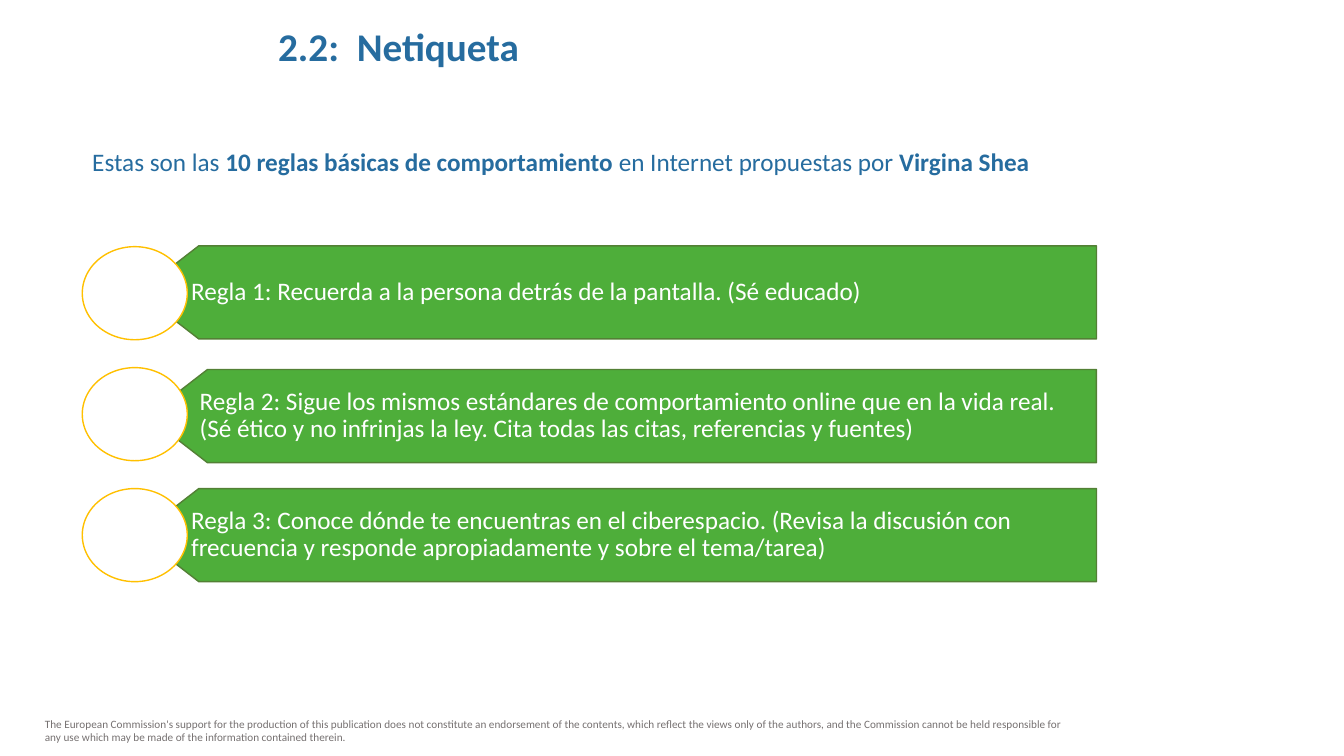
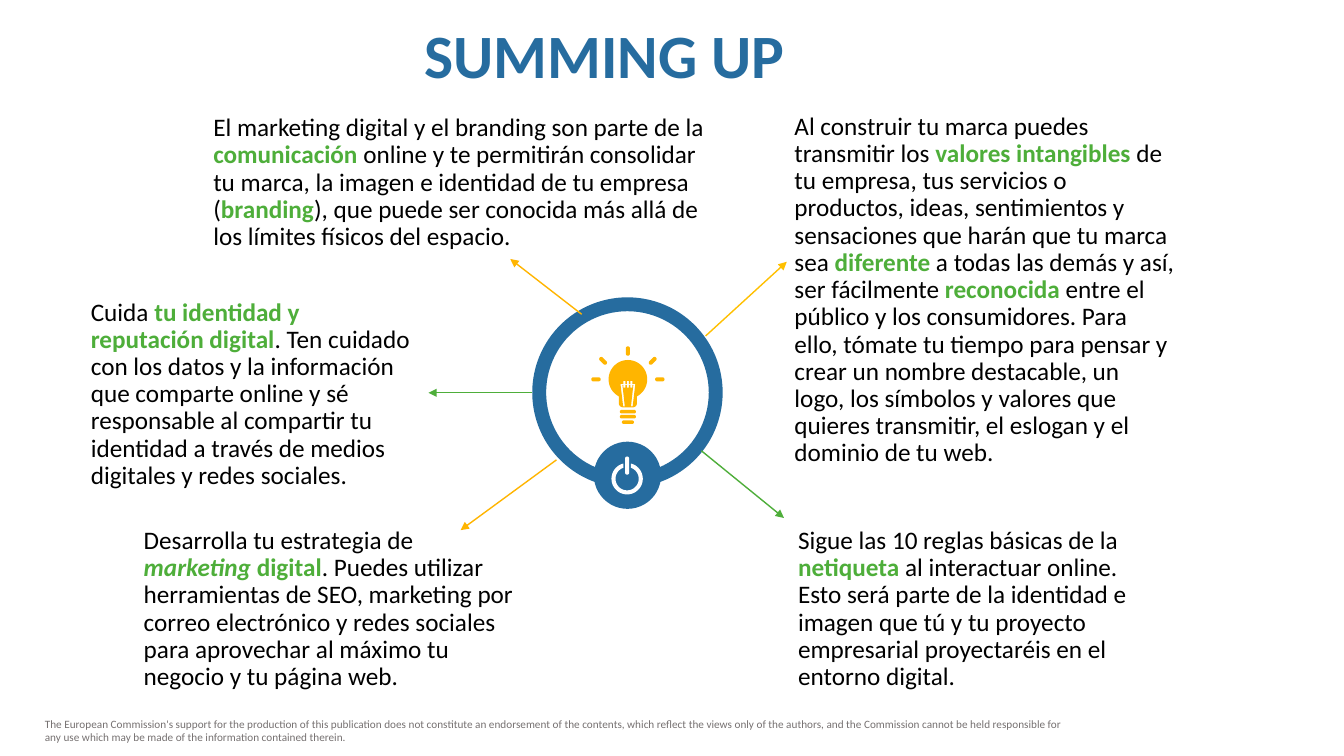
from math import cos, radians, sin

from lxml.etree import SubElement
from pptx import Presentation
from pptx.dml.color import RGBColor
from pptx.enum.shapes import MSO_CONNECTOR, MSO_SHAPE
from pptx.enum.text import MSO_ANCHOR, MSO_AUTO_SIZE, PP_ALIGN
from pptx.oxml.ns import qn
from pptx.util import Pt

FONT = "Calibri"
BLUE, GREEN, AMBER, GOLD = "266C9F", "4EAE3A", "FFB500", "FFC000"
DARK_GREEN, GREY, BLACK, WHITE = "538035", "767171", "000000", "FFFFFF"

FOOTER = (
    "The European Commission's support for the production of this publication does not "
    "constitute an endorsement of the contents, which reflect the views only of the authors, "
    "and the Commission cannot be held responsible for any use which may be made of the "
    "information contained therein."
)

RULES_INTRO = [
    ("Estas son las ", ""),
    ("10 reglas básicas de comportamiento ", "bold"),
    ("en Internet propuestas por ", ""),
    ("Virgina Shea", "bold"),
]
RULES = [
    (99, 175.6, "Regla 1: Recuerda a la persona detrás de la pantalla. (Sé educado)"),
    (105.2, 264, "Regla 2: Sigue los mismos estándares de comportamiento online que en la vida "
                 "real. (Sé ético y no infrinjas la ley. Cita todas las citas, referencias y fuentes)"),
    (99, 349, "Regla 3: Conoce dónde te encuentras en el ciberespacio. (Revisa la discusión con "
              "frecuencia y responde apropiadamente y sobre el tema/tarea)"),
]
RULE_RIGHT, RULE_HEIGHT, RULE_POINT = 783.2, 66.5, 43
CIRCLE_LEFT, CIRCLE_TOP, CIRCLE_PITCH, CIRCLE_WIDTH = 58.8, 176.2, 86.4, 75

SUMMARIES = [
    ((95.6, 372.8, 285, 125), [
        ("Desarrolla tu estrategia de ", ""),
        ("marketing", "bold italic"),
        (" digital", "bold"),
        (". Puedes utilizar herramientas de SEO, marketing por correo electrónico y redes "
         "sociales para aprovechar al máximo tu negocio y tu página web.", ""),
    ]),
    ((560.4, 76, 286, 263), [
        ("Al construir tu marca puedes transmitir los ", ""),
        ("valores intangibles ", "bold"),
        ("de tu empresa, tus servicios o productos, ideas, sentimientos y sensaciones que harán "
         "que tu marca sea ", ""),
        ("diferente", "bold"),
        (" a todas las demás y así, ser fácilmente ", ""),
        ("reconocida", "bold"),
        (" entre el público y los consumidores. Para ello, tómate tu tiempo para pensar y crear "
         "un nombre destacable, un logo, los símbolos y valores que quieres transmitir, el "
         "eslogan y el dominio de tu web.", ""),
    ]),
    ((563, 372.8, 263, 125), [
        ("Sigue las 10 reglas básicas de la ", ""),
        ("netiqueta ", "bold"),
        ("al interactuar online. Esto será parte de la identidad e imagen que tú y tu proyecto "
         "empresarial proyectaréis en el entorno digital.", ""),
    ]),
    ((145.3, 78.2, 376, 105), [
        ("El marketing digital y el branding son parte de la ", ""),
        ("comunicación ", "bold"),
        ("online y te permitirán consolidar tu marca, la imagen e identidad de tu empresa (", ""),
        ("branding", "bold"),
        ("), que puede ser conocida más allá de los límites físicos del espacio.", ""),
    ]),
    ((57.8, 209.3, 243, 145), [
        ("Cuida ", ""),
        ("tu identidad y reputación digital", "bold"),
        (". Ten cuidado con los datos y la información que comparte online y sé responsable al "
         "compartir tu identidad a través de medios digitales y redes sociales.", ""),
    ]),
]
ARROWS = [
    ((380, 280.6), (306, 280.6), GREEN),
    ((501, 322), (560, 370), GREEN),
    ((415.5, 224.5), (364.5, 185), AMBER),
    ((504, 240), (562, 187), GOLD),
    ((397.5, 328.5), (329, 378.7), AMBER),
]

CENTRE_X, RING_Y, HUB_Y, BULB_Y, POWER_Y = 448.2, 280.4, 339.5, 271, 342
RAYS = [(-22.8, 0, 0), (-17.7, -13.2, 45), (0, -20.2, 90), (17.7, -13.2, -45), (22.8, 0, 0)]
BASE_BARS = [(23.1, 11.5), (26.7, 11.5), (30.6, 8.6)]
FILAMENT_HALF = [
    (0.7, 1.2), (0.7, 3.3), (1.8, 3.3), (1.8, 1.2), (3.2, 1.2), (3.2, 3.3), (5.3, 3.3),
    (3.4, 19.3), (2.2, 19.3), (3.9, 4), (3.2, 4), (3.2, 6), (1.8, 6), (1.8, 4), (0.7, 4), (0.7, 6),
]


def colour(value):
    return RGBColor.from_string(value)


def style_shape(shape, fill, line=None):
    shape.shadow.inherit = False
    shape.fill.solid()
    shape.fill.fore_color.rgb = colour(fill)
    if line:
        shape.line.color.rgb = colour(line)
        shape.line.width = Pt(1)
    else:
        shape.line.fill.background()


def write(shape, pieces, size, plain, strong, spacing, anchor=MSO_ANCHOR.MIDDLE):
    frame = shape.text_frame
    frame.word_wrap = True
    frame.auto_size = MSO_AUTO_SIZE.NONE
    frame.vertical_anchor = anchor
    paragraph = frame.paragraphs[0]
    paragraph.alignment = PP_ALIGN.LEFT
    paragraph.line_spacing = spacing
    for text, style in pieces:
        run = paragraph.add_run()
        run.text = text
        run.font.name = FONT
        run.font.size = Pt(size)
        run.font.bold = "bold" in style
        run.font.italic = "italic" in style
        run.font.color.rgb = colour(strong if style else plain)


def add_text(slide, box, pieces, size, plain, strong, spacing, anchor=MSO_ANCHOR.MIDDLE):
    shape = slide.shapes.add_textbox(*map(Pt, box))
    write(shape, pieces, size, plain, strong, spacing, anchor)


def add_centred(slide, kind, x, y, width, height, fill, line=None):
    shape = slide.shapes.add_shape(
        kind, Pt(x - width / 2), Pt(y - height / 2), Pt(width), Pt(height))
    style_shape(shape, fill, line)
    return shape


def add_outlines(slide, x, y, outlines, fill, line=None):
    builder = None
    for outline in outlines:
        points = [(Pt(x + dx), Pt(y + dy)) for dx, dy in outline]
        if builder is None:
            builder = slide.shapes.build_freeform(*points[0])
        else:
            builder.move_to(*points[0])
        builder.add_line_segments(points[1:])
    shape = builder.convert_to_shape()
    style_shape(shape, fill, line)
    return shape


def arc(x, y, radius, start, end, steps=12):
    angles = [radians(start + (end - start) * step / steps) for step in range(steps + 1)]
    return [(x + radius * cos(angle), y + radius * sin(angle)) for angle in angles]


def pill(x, y, length, thickness, angle=0):
    reach = (length - thickness) / 2
    dx, dy = reach * cos(radians(angle)), reach * sin(radians(angle))
    return (arc(x + dx, y + dy, thickness / 2, angle - 90, angle + 90)
            + arc(x - dx, y - dy, thickness / 2, angle + 90, angle + 270))


def add_arrow(slide, start, end, line):
    arrow = slide.shapes.add_connector(MSO_CONNECTOR.STRAIGHT, *map(Pt, start + end))
    arrow.line.color.rgb = colour(line)
    arrow.line.width = Pt(1)
    properties = arrow.element.spPr
    SubElement(properties.find(qn("a:ln")), qn("a:tailEnd")).set("type", "triangle")
    SubElement(properties, qn("a:effectLst"))


def new_slide(presentation, title, box, size):
    slide = presentation.slides.add_slide(presentation.slide_layouts[5])
    add_text(slide, (25, 508.5, 753, 27), [(FOOTER, "")], 8, GREY, GREY, 1, MSO_ANCHOR.TOP)
    heading = slide.shapes.title
    heading.left, heading.top, heading.width, heading.height = map(Pt, box)
    write(heading, [(title, "bold")], size, BLUE, BLUE, 0.9)
    return slide


def add_rule(slide, index, left, top, text):
    width, middle = RULE_RIGHT - left, RULE_HEIGHT / 2
    outline = [(width, RULE_HEIGHT), (RULE_POINT, RULE_HEIGHT), (0, middle),
               (RULE_POINT, 0), (width, 0)]
    banner = add_outlines(slide, left, top, [outline], GREEN, DARK_GREEN)
    frame = banner.text_frame
    frame.margin_left, frame.margin_right = Pt(37.5), Pt(8)
    frame.margin_top = frame.margin_bottom = Pt(4.3)
    write(banner, [(text, "")], 18, WHITE, WHITE, 0.9)
    add_centred(slide, MSO_SHAPE.OVAL, CIRCLE_LEFT + CIRCLE_WIDTH / 2,
                CIRCLE_TOP + index * CIRCLE_PITCH + middle,
                CIRCLE_WIDTH, RULE_HEIGHT, WHITE, GOLD)


def add_bulb(slide):
    glass = (arc(0, 0, 13.8, 118, 422, 40)
             + arc(3.5, 17, 3, 0, 90) + arc(-3.5, 17, 3, 90, 180))
    filament = FILAMENT_HALF + [(-x, y) for x, y in reversed(FILAMENT_HALF)]
    rays = [pill(x, y, 6.7, 2.9, angle) for x, y, angle in RAYS]
    bars = [pill(0, y, width, 2.5) for y, width in BASE_BARS]
    add_outlines(slide, CENTRE_X + 0.3, BULB_Y, [glass, filament, *rays, *bars], AMBER)


def add_hub(slide):
    ring = add_centred(slide, MSO_SHAPE.DONUT, CENTRE_X, RING_Y, 136, 136, BLUE)
    ring.adjustments[0] = 0.073
    add_centred(slide, MSO_SHAPE.OVAL, CENTRE_X, HUB_Y, 48, 48, BLUE)
    add_bulb(slide)
    power_ring = arc(0, 0, 11.2, -76, 256, 40) + arc(0, 0, 8.3, 251, -71, 40)
    add_outlines(slide, CENTRE_X - 0.2, POWER_Y, [power_ring, pill(0, -9.4, 13, 2.9, 90)], WHITE)


def main():
    presentation = Presentation()
    presentation.slide_width, presentation.slide_height = Pt(960), Pt(540)

    rules_slide = new_slide(presentation, "2.2:  Netiqueta", (191.5, 14.5, 289, 40), 28)
    add_text(rules_slide, (58.8, 98, 780, 31), RULES_INTRO, 18, BLUE, BLUE, 1.15, MSO_ANCHOR.TOP)
    for index, rule in enumerate(RULES):
        add_rule(rules_slide, index, *rule)

    summary_slide = new_slide(presentation, "SUMMING UP", (296, 13, 274, 57), 44)
    add_hub(summary_slide)
    for arrow in ARROWS:
        add_arrow(summary_slide, *arrow)
    for box, pieces in SUMMARIES:
        add_text(summary_slide, box, pieces, 18, BLACK, GREEN, 0.9)

    presentation.save("out.pptx")


if __name__ == "__main__":
    main()
